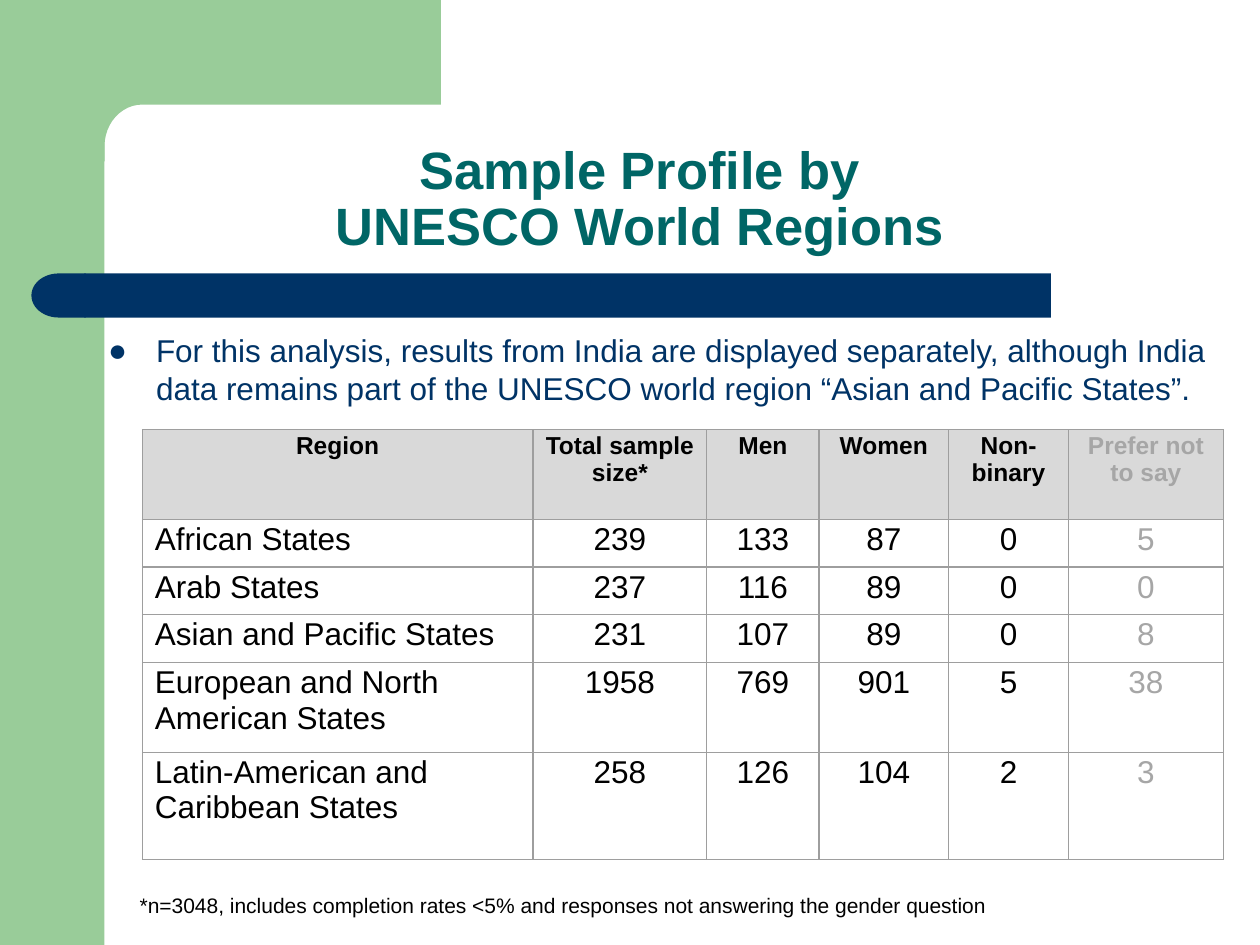
from math import cos, pi, sin

from lxml.etree import SubElement
from pptx import Presentation
from pptx.dml.color import RGBColor as RGB
from pptx.enum.shapes import MSO_SHAPE as SHAPE
from pptx.enum.text import MSO_ANCHOR as ANCHOR, PP_ALIGN as ALIGN
from pptx.oxml.ns import qn
from pptx.util import Inches, Pt

COLORS = {
    "green": "99CC99", "navy": "003366", "teal": "006666", "black": "000000",
    "muted": "A6A6A6", "header": "D9D9D9", "border": "9E9E9E", "white": "FFFFFF",
}
COLUMN_WIDTHS = [3.1, 1.38, 0.89, 1.03, 0.95, 1.23]
ROW_HEIGHTS = [0.71, 0.38, 0.38, 0.38, 0.71, 0.85]
ROWS = [
    ["Region", "Total sample size*", "Men", "Women", "Non-binary", "Prefer not to say"],
    ["African States", 239, 133, 87, 0, 5],
    ["Arab States", 237, 116, 89, 0, 0],
    ["Asian and Pacific States", 231, 107, 89, 0, 8],
    ["European and North American States", 1958, 769, 901, 5, 38],
    ["Latin-American and Caribbean States", 258, 126, 104, 2, 3],
]


def rgb(name):
    return RGB.from_string(COLORS[name])


def write(tf, text, size=18, color="black", bold=False, align=ALIGN.LEFT, spacing=None):
    p = tf.paragraphs[0]
    p.text = text
    p.alignment = align
    if spacing:
        p.line_spacing = spacing
    for r in p.runs:
        r.font.name = "Arial"
        r.font.size = Pt(size)
        r.font.bold = bold
        r.font.color.rgb = rgb(color)
    return p


class Builder:
    """Holds the style and the current slide and adds each kind of element."""

    def __init__(self, slide, font_margin=0.1):
        self.slide = slide
        self.margin = Inches(font_margin)

    def paint(self, sp, color):
        sp.shadow.inherit = False
        sp.fill.solid()
        sp.fill.fore_color.rgb = rgb(color)
        sp.line.fill.background()

    def shape(self, kind, box, color, flip=False):
        sp = self.slide.shapes.add_shape(kind, *map(Inches, box))
        self.paint(sp, color)
        if flip:
            sp._element.spPr.find(qn("a:xfrm")).set("flipH", "1")
        return sp

    def outline(self, points, color):
        start, *rest = [(Inches(x), Inches(y)) for x, y in points]
        builder = self.slide.shapes.build_freeform(*start)
        builder.add_line_segments(rest, close=True)
        self.paint(builder.convert_to_shape(), color)

    def text(self, box, text, anchor=ANCHOR.TOP, pad=0.05, **fmt):
        tf = self.slide.shapes.add_textbox(*map(Inches, box)).text_frame
        tf.word_wrap = True
        tf.vertical_anchor = anchor
        tf.margin_left = tf.margin_right = self.margin
        tf.margin_top = tf.margin_bottom = Inches(pad)
        return write(tf, text, **fmt)

    def bullet(self, box, text, color):
        pPr = self.text(box, text, color=color)._p.get_or_add_pPr()
        pPr.set("marL", str(Inches(0.38)))
        pPr.set("indent", str(Inches(-0.41)))
        clr = SubElement(pPr, qn("a:buClr"))
        SubElement(clr, qn("a:srgbClr"), val=COLORS[color])
        SubElement(pPr, qn("a:buFont"), typeface="Arial")
        SubElement(pPr, qn("a:buChar"), char="●")

    def cell(self, cell, text, fill, **fmt):
        cell.margin_left = cell.margin_right = self.margin
        cell.margin_top = cell.margin_bottom = Inches(0.02)
        write(cell.text_frame, text, **fmt)
        tcPr = cell._tc.get_or_add_tcPr()
        for side in ("L", "R", "T", "B"):
            ln = SubElement(tcPr, qn(f"a:ln{side}"), w=str(Pt(0.75)))
            solid = SubElement(ln, qn("a:solidFill"))
            SubElement(solid, qn("a:srgbClr"), val=COLORS["border"])
        if fill:
            cell.fill.solid()
            cell.fill.fore_color.rgb = rgb(fill)
        else:
            cell.fill.background()

    def table(self, left, top, rows, widths, heights):
        box = map(Inches, (left, top, sum(widths), sum(heights)))
        table = self.slide.shapes.add_table(len(rows), len(widths), *box).table
        for column, width in zip(table.columns, widths):
            column.width = Inches(width)
        for row, height in zip(table.rows, heights):
            row.height = Inches(height)
        for i, values in enumerate(rows):
            head = i == 0
            for j, value in enumerate(values):
                self.cell(
                    table.cell(i, j), str(value), "header" if head else None,
                    size=14 if head else 18, bold=head,
                    color="muted" if j == len(widths) - 1 else "black",
                    align=ALIGN.CENTER if head or j else ALIGN.LEFT,
                )


def main():
    prs = Presentation()
    prs.slide_width, prs.slide_height = Inches(10), Inches(7.5)
    s = Builder(prs.slides.add_slide(prs.slide_layouts[6]))

    s.shape(SHAPE.RECTANGLE, (0, 0, 0.83, 7.5), "green")
    angles = [pi / 2 * i / 12 for i in range(13)]
    corner = [(1.13 - 0.3 * sin(a), 1.16 - 0.33 * cos(a)) for a in angles]
    s.outline([(3.5, 0), (3.5, 0.83), *corner, (0.83, 1.28), (0.5, 1.28), (0.5, 0)], "green")
    bar = s.shape(SHAPE.ROUNDED_RECTANGLE, (0.67, 2.17, 7.67, 0.35), "navy")
    bar.adjustments[0] = 0
    s.shape(SHAPE.FLOWCHART_DELAY, (0.25, 2.17, 0.43, 0.35), "navy", flip=True)

    s.text((0.83, 0.84, 8.5, 1.25), "Sample Profile by\nUNESCO World Regions",
           anchor=ANCHOR.BOTTOM, size=30, color="teal", bold=True,
           align=ALIGN.CENTER, spacing=0.9)
    s.table(1.13, 3.41, ROWS, COLUMN_WIDTHS, ROW_HEIGHTS)
    s.text((1.01, 6.98, 7.95, 0.38),
           "*n=3048, includes completion rates <5% and responses "
           "not answering the gender question", pad=0.1, size=12)
    s.bullet((0.76, 2.58, 9.05, 0.83),
             "For this analysis, results from India are displayed separately, although "
             "India data remains part of the UNESCO world region “Asian and Pacific "
             "States”.", "navy")
    prs.save("out.pptx")


if __name__ == "__main__":
    main()
